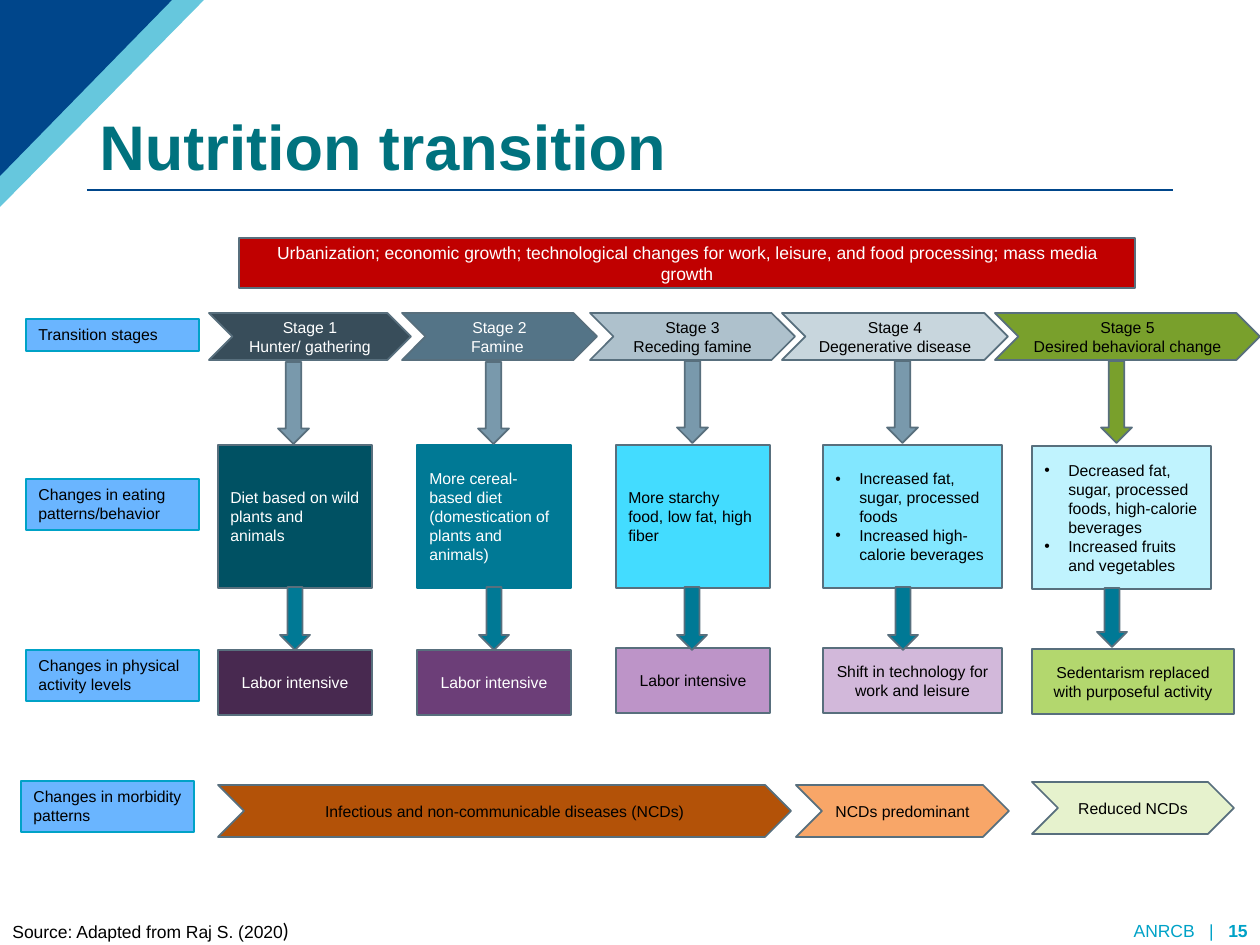
from lxml import etree
from pptx import Presentation
from pptx import util as u
from pptx.dml.color import RGBColor
from pptx.enum import shapes as sh, text as tx
from pptx.oxml import ns

PX = u.Inches(1) / 126
BLACK, WHITE = RGBColor(0, 0, 0), RGBColor(255, 255, 255)
NAVY, CYAN = RGBColor(0x00, 0x46, 0x8B), RGBColor(0x00, 0xA2, 0xC7)
GREEN, TEAL = RGBColor(0x00, 0x72, 0x7E), RGBColor(0x00, 0x79, 0x95)
EDGE, RED = RGBColor(0x58, 0x6F, 0x7D), RGBColor(0xC0, 0, 0)
SKY, STEEL = RGBColor(0x6A, 0xB5, 0xFF), RGBColor(0x79, 0x99, 0xAC)
OLIVE = RGBColor(0x79, 0xA0, 0x2C)
SLATE, DUSK = RGBColor(0x38, 0x4D, 0x5A), RGBColor(0x54, 0x74, 0x87)
MIST, HAZE = RGBColor(0xAE, 0xC1, 0xCC), RGBColor(0xC8, 0xD6, 0xDD)
DEEP, AQUA = RGBColor(0x00, 0x51, 0x63), RGBColor(0x43, 0xDC, 0xFF)
ICE, FROST = RGBColor(0x82, 0xE7, 0xFF), RGBColor(0xC0, 0xF3, 0xFE)
PLUM, GRAPE = RGBColor(0x48, 0x29, 0x50), RGBColor(0x6C, 0x3E, 0x78)
LILAC, MAUVE = RGBColor(0xBD, 0x94, 0xC8), RGBColor(0xD2, 0xB8, 0xDA)
LIME, PALE = RGBColor(0xB3, 0xD7, 0x6E), RGBColor(0xE6, 0xF2, 0xCD)
RUST, PEACH = RGBColor(0xB3, 0x52, 0x08), RGBColor(0xF8, 0xA6, 0x68)

RECT = sh.MSO_SHAPE.RECTANGLE
CHEVRON = sh.MSO_SHAPE.CHEVRON
ARROW = sh.MSO_SHAPE.DOWN_ARROW
LEFT, MID, RIGHT = tx.PP_ALIGN.LEFT, tx.PP_ALIGN.CENTER, tx.PP_ALIGN.RIGHT

LABELS = [
    (26, 319, 32, "Transition stages"),
    (26, 479, 51, "Changes in eating patterns/behavior"),
    (26, 650, 51, "Changes in physical activity levels"),
    (21, 781, 51, "Changes in morbidity patterns"),
]
STAGES = [
    (209, 202, SLATE, WHITE, "Hunter/ gathering"),
    (402, 195, DUSK, WHITE, "Famine "),
    (590, 205, MIST, BLACK, "Receding famine"),
    (782, 226, HAZE, BLACK, "Degenerative disease"),
    (995, 265, OLIVE, BLACK, "Desired behavioral change"),
]
DIETS = [
    (218, 445, 154, DEEP, EDGE, WHITE, "Diet based on wild plants and animals"),
    (417, 445, 154, TEAL, TEAL, WHITE,
     "More cereal-based diet (domestication of plants and animals)"),
    (616, 445, 154, AQUA, EDGE, BLACK, "More starchy food, low fat, high fiber"),
    (823, 445, 179, ICE, EDGE, BLACK,
     "Increased fat, sugar, processed foods\nIncreased high-calorie beverages"),
    (1032, 446, 179, FROST, EDGE, BLACK,
     "Decreased fat, sugar, processed foods, high-calorie beverages\n"
     "Increased fruits and vegetables"),
]
WORK = [
    (218, 650, 154, PLUM, WHITE, "Labor intensive"),
    (417, 650, 154, GRAPE, WHITE, "Labor intensive"),
    (616, 648, 154, LILAC, BLACK, "Labor intensive"),
    (823, 648, 179, MAUVE, BLACK, "Shift in technology for work and leisure"),
    (1032, 649, 202, LIME, BLACK, "Sedentarism replaced with purposeful activity"),
]
DISEASE = [
    (218, 785, 573, RUST, "Infectious and non-communicable diseases (NCDs)"),
    (796, 785, 213, PEACH, "NCDs predominant"),
    (1032, 782, 202, PALE, "Reduced NCDs"),
]
UPPER = [(278, 362), (478, 362), (677, 361), (887, 361), (1101, 361)]
LOWER = [(280, 587, 63), (479, 587, 63), (677, 587, 63), (888, 587, 63),
         (1097, 588, 59)]


def px(*vals):
    """Turn px lengths into EMU."""
    return [round(v * PX) for v in vals]


def style(run, size, color, bold=False, face="Arial"):
    """Set the font of one run."""
    font = run.font
    font.name, font.size, font.bold = face, u.Pt(size), bold
    font.color.rgb = color


def write(frame, words, size, color, align=MID, bold=False):
    """Fill a text frame with evenly styled paragraphs."""
    frame.word_wrap = True
    frame.text = words
    for para in frame.paragraphs:
        para.alignment = align
        for run in para.runs:
            style(run, size, color, bold)


def bullet(para):
    """Give a paragraph a hanging round bullet."""
    props = para._p.get_or_add_pPr()
    props.set("marL", str(px(24)[0]))
    props.set("indent", str(px(-24)[0]))
    font = etree.SubElement(props, ns.qn("a:buFont"))
    font.set("typeface", "Arial")
    etree.SubElement(props, ns.qn("a:buChar")).set("char", "•")


def block(slide, kind, box, fill, words="", color=BLACK, size=9, align=MID,
          edge=EDGE, width=1):
    """Add a filled and outlined shape with text."""
    shape = slide.shapes.add_shape(kind, *px(*box))
    shape.shadow.inherit = False
    shape.fill.solid()
    shape.fill.fore_color.rgb = fill
    shape.line.color.rgb = edge
    shape.line.width = u.Pt(width)
    if words:
        shape.text_frame.vertical_anchor = tx.MSO_ANCHOR.MIDDLE
        write(shape.text_frame, words, size, color, align)
    return shape


def label(slide, left, top, height, words):
    """Add a row label."""
    shape = block(slide, RECT, (left, top, 173, height), SKY, words,
                  align=LEFT, edge=CYAN, width=0.75)
    shape.text_frame.vertical_anchor = tx.MSO_ANCHOR.TOP
    shape.text_frame.auto_size = tx.MSO_AUTO_SIZE.SHAPE_TO_FIT_TEXT


def note(slide, box, words, size, color, anchor, align=LEFT, bold=False):
    """Add a text box and return its first paragraph."""
    frame = slide.shapes.add_textbox(*px(*box)).text_frame
    write(frame, words, size, color, align, bold)
    frame.vertical_anchor = anchor
    return frame.paragraphs[0]


def corner(slide, wide, high, color, alpha=100):
    """Add a triangle in the top left corner."""
    pen = slide.shapes.build_freeform(0, 0, scale=PX)
    pen.add_line_segments([(wide, 0), (0, high)], close=True)
    shape = pen.convert_to_shape()
    shape.shadow.inherit = False
    shape.line.fill.background()
    shape.fill.solid()
    shape.fill.fore_color.rgb = color
    if alpha < 100:
        tint = shape.fill._xPr.find(".//" + ns.qn("a:srgbClr"))
        etree.SubElement(tint, ns.qn("a:alpha")).set("val", str(alpha * 1000))


def frame(slide):
    """Add the corner, title, rule and footers."""
    rule = slide.shapes.add_connector(sh.MSO_CONNECTOR.STRAIGHT,
                                      *px(87, 190, 1173, 190))
    rule.line.color.rgb = NAVY
    rule.line.width = u.Pt(0.75)
    etree.SubElement(rule._element.spPr, ns.qn("a:effectLst"))
    corner(slide, 204, 207, CYAN, 60)
    corner(slide, 172, 176, NAVY)
    title = note(slide, (87, 50, 1086, 140), "Nutrition transition", 36, GREEN,
                 tx.MSO_ANCHOR.BOTTOM, bold=True)
    title.line_spacing = 0.9
    foot = note(slide, (1052, 917, 208, 27), "ANRCB   |   ", 10, CYAN,
                tx.MSO_ANCHOR.MIDDLE, RIGHT)
    page = foot.add_run()
    page.text = "15"
    style(page, 10, CYAN, True)
    cite = note(slide, (0, 911, 702, 38), "Source: Adapted from Raj S. (2020",
                10, BLACK, tx.MSO_ANCHOR.TOP)
    end = cite.add_run()
    end.text = ")"
    style(end, 12, BLACK, face="Calibri")


def chart(slide):
    """Add the stages with their diets, work and diseases."""
    block(slide, RECT, (239, 238, 896, 50), RED,
          "Urbanization; economic growth; technological changes for work, "
          "leisure, and food processing; mass media growth", WHITE, 10)
    for row in LABELS:
        label(slide, *row)
    for num, (left, wide, fill, color, name) in enumerate(STAGES, 1):
        block(slide, CHEVRON, (left, 313, wide, 47), fill,
              f"Stage {num}\n{name}", color)
    for left, top, wide, fill, edge, color, words in DIETS:
        box = block(slide, RECT, (left, top, wide, 143), fill, words, color,
                    align=LEFT, edge=edge)
        paras = box.text_frame.paragraphs
        if len(paras) > 1:
            for para in paras:
                bullet(para)
    for left, top, wide, fill, color, words in WORK:
        block(slide, RECT, (left, top, wide, 65), fill, words, color)
    for left, top, wide, fill, words in DISEASE:
        block(slide, CHEVRON, (left, top, wide, 52), fill, words)
    for left, top in UPPER:
        fill = OLIVE if left == UPPER[-1][0] else STEEL
        block(slide, ARROW, (left, top, 31, 82), fill)
    for left, top, high in LOWER:
        block(slide, ARROW, (left, top, 30, high), TEAL)


def main():
    """Build and save the slide."""
    deck = Presentation()
    deck.slide_width, deck.slide_height = px(1260, 945)
    slide = deck.slides.add_slide(deck.slide_layouts[6])
    frame(slide)
    chart(slide)
    deck.save("out.pptx")


if __name__ == "__main__":
    main()
